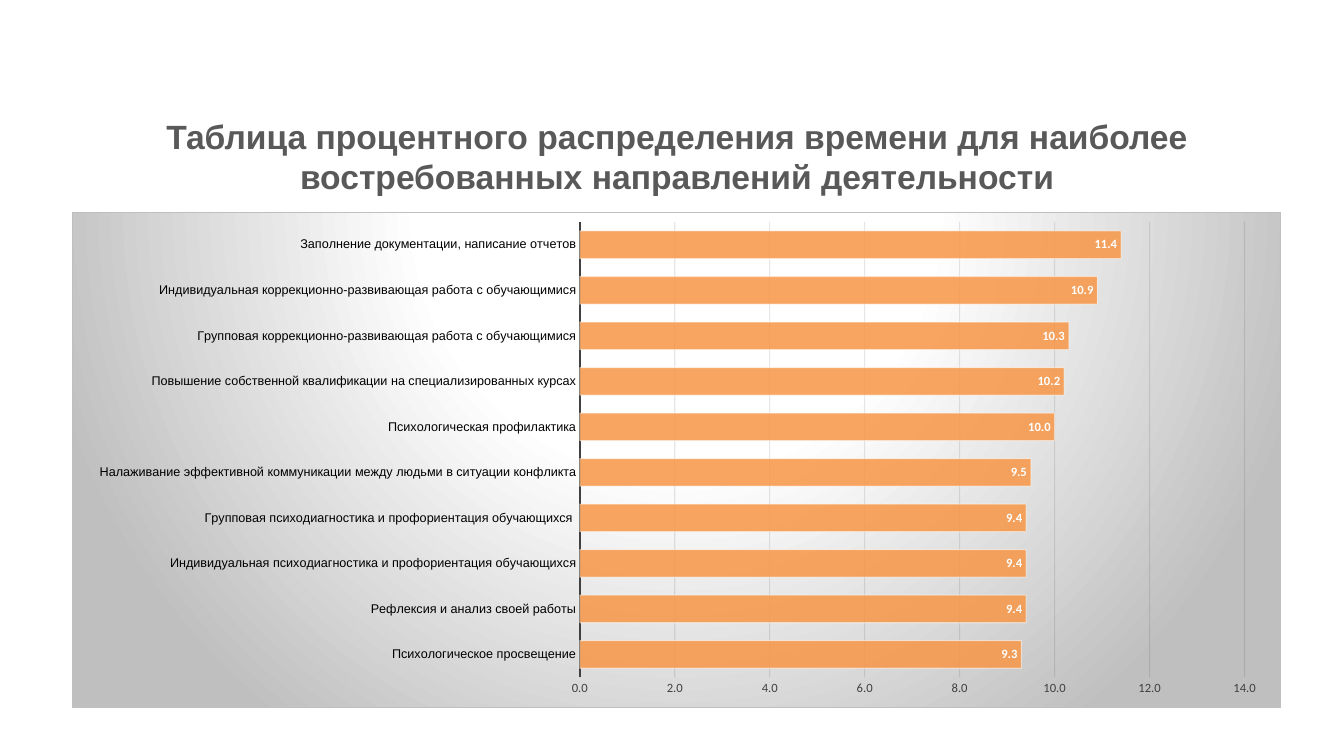
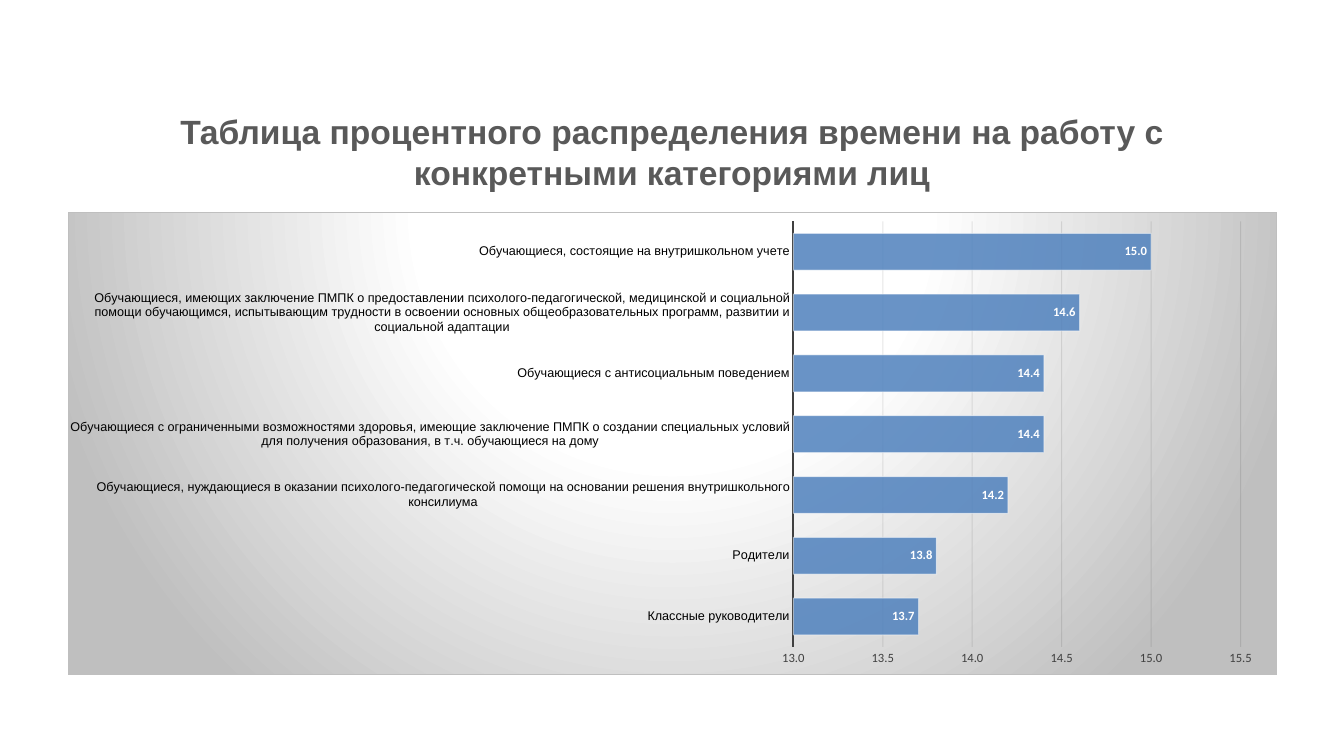
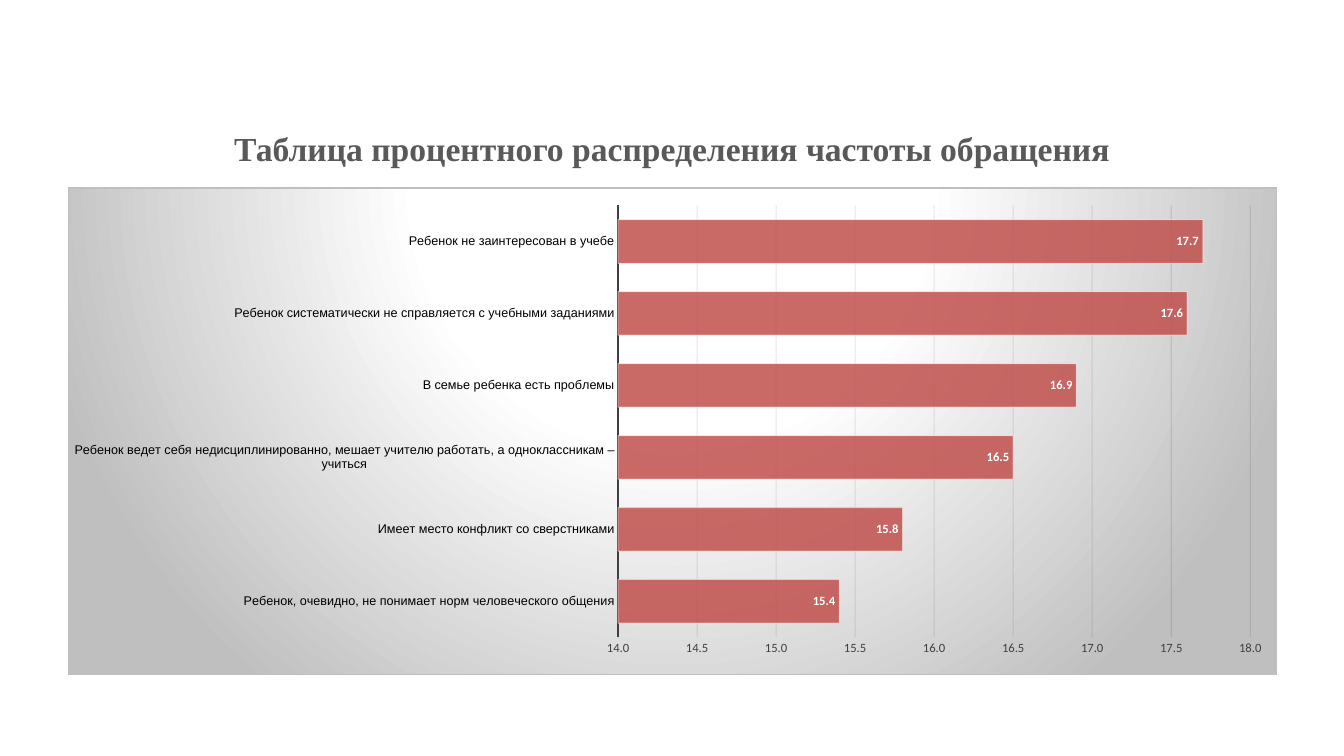
from lxml import etree
from pptx import Presentation
from pptx.chart.data import CategoryChartData
from pptx.dml.color import RGBColor
from pptx.enum import chart as kinds, text
from pptx.oxml import parse_xml
from pptx.oxml.ns import nsdecls, qn
from pptx.util import Inches, Pt

WHITE, BLACK, SILVER, GREY, DARK = "FFFFFF", "000000", "BFBFBF", "595959", "404040"
GRID = "0D0D0D"
ORANGE, BLUE, RED = "F79646", "4F81BD", "C0504D"
NUMBERS = "0.0"

PAGES = [
    dict(
        title="Таблица процентного распределения времени для наиболее востребованных направлений деятельности",
        face="Arial",
        title_box=(0.73, 1.31, 11.97, 0.47),
        chart_box=(0.71, 2.1, 12, 4.92),
        plot=(0.42, 0.02, 0.55, 0.92),
        scale=(0, 14, 2),
        color=ORANGE,
        rows=[
            ("Психологическое просвещение", 9.3),
            ("Рефлексия и анализ своей работы", 9.4),
            ("Индивидуальная психодиагностика и профориентация обучающихся", 9.4),
            ("Групповая психодиагностика и профориентация обучающихся ", 9.4),
            ("Налаживание эффективной коммуникации между людьми в ситуации конфликта", 9.5),
            ("Психологическая профилактика", 10),
            ("Повышение собственной квалификации на специализированных курсах", 10.2),
            ("Групповая коррекционно-развивающая работа с обучающимися", 10.3),
            ("Индивидуальная коррекционно-развивающая работа с обучающимися", 10.9),
            ("Заполнение документации, написание отчетов", 11.4),
        ],
    ),
    dict(
        title="Таблица процентного распределения времени на работу с конкретными категориями лиц",
        face="Arial",
        title_box=(0.68, 1.15, 11.97, 0.71),
        chart_box=(0.67, 2.1, 12, 4.6),
        plot=(0.6, 0.02, 0.37, 0.92),
        scale=(13, 15.5, 0.5),
        color=BLUE,
        rows=[
            ("Классные руководители", 13.7),
            ("Родители", 13.8),
            ("Обучающиеся, нуждающиеся в оказании психолого-педагогической помощи "
             "на основании решения внутришкольного консилиума", 14.2),
            ("Обучающиеся с ограниченными возможностями здоровья, имеющие заключение ПМПК "
             "о создании специальных условий для получения образования, "
             "в т.ч. обучающиеся на дому", 14.4),
            ("Обучающиеся с антисоциальным поведением", 14.4),
            ("Обучающиеся, имеющих заключение ПМПК о предоставлении "
             "психолого-педагогической, медицинской и социальной помощи обучающимся, "
             "испытывающим трудности в освоении основных общеобразовательных программ, "
             "развитии и социальной адаптации", 14.6),
            ("Обучающиеся, состоящие на внутришкольном учете", 15),
        ],
    ),
    dict(
        title="Таблица процентного распределения частоты обращения",
        face="Times New Roman",
        title_box=(0.68, 1.15, 11.97, 0.63),
        chart_box=(0.67, 1.86, 12, 4.84),
        plot=(0.455, 0.036, 0.523, 0.887),
        scale=(14, 18, 0.5),
        color=RED,
        rows=[
            ("Ребенок, очевидно, не понимает норм человеческого общения", 15.4),
            ("Имеет место конфликт со сверстниками", 15.8),
            ("Ребенок ведет себя недисциплинированно, мешает учителю работать, "
             "а одноклассникам – учиться", 16.5),
            ("В семье ребенка есть проблемы", 16.9),
            ("Ребенок систематически не справляется с учебными заданиями", 17.6),
            ("Ребенок не заинтересован в учебе", 17.7),
        ],
    ),
]


def rgb(code):
    return RGBColor.from_string(code)


def style_font(font, face, size, color, bold=False):
    font.name, font.size, font.bold = face, Pt(size), bold
    font.color.rgb = rgb(color)


def style_line(line, color, width):
    line.color.rgb = rgb(color)
    line.width = Pt(width)


def set_alpha(fill, percent):
    color = fill.find(qn("a:srgbClr"))
    etree.SubElement(color, qn("a:alpha")).set("val", str(percent * 1000))


def add_title(page, box, words, face):
    title = page.shapes.title
    title.left, title.top, title.width, title.height = map(Inches, box)
    frame = title.text_frame
    frame.word_wrap = True
    frame.auto_size = text.MSO_AUTO_SIZE.NONE
    frame.vertical_anchor = text.MSO_ANCHOR.MIDDLE
    para = frame.paragraphs[0]
    para.alignment = text.PP_ALIGN.CENTER
    span = para.add_run()
    span.text = words
    style_font(span.font, face, 24, GREY, True)


def paint_background(chart):
    stops = "".join(
        f'<a:gs pos="{place * 1000}"><a:srgbClr val="{color}"/></a:gs>'
        for place, color in ((0, WHITE), (39, WHITE), (100, SILVER))
    )
    area = parse_xml(
        f'<c:spPr {nsdecls("c", "a")}><a:gradFill><a:gsLst>{stops}</a:gsLst>'
        '<a:path path="circle"><a:fillToRect l="50000" t="-80000" r="50000" b="180000"/></a:path>'
        f'</a:gradFill><a:ln w="{Pt(0.75)}"><a:solidFill><a:srgbClr val="{SILVER}"/>'
        '</a:solidFill></a:ln></c:spPr>'
    )
    chart.element.find(qn("c:chart")).addnext(area)


def place_plot(chart, plot):
    area = chart.element.find(qn("c:chart")).find(qn("c:plotArea"))
    for old in area.findall(qn("c:layout")):
        area.remove(old)
    sizes = "".join(f'<c:{key} val="{value}"/>' for key, value in zip("xywh", plot))
    area.insert(0, parse_xml(
        f'<c:layout {nsdecls("c")}><c:manualLayout><c:layoutTarget val="inner"/>'
        f'<c:xMode val="edge"/><c:yMode val="edge"/>{sizes}</c:manualLayout></c:layout>'
    ))


def style_axes(chart, scale):
    names, values = chart.category_axis, chart.value_axis
    for axis, face, color in ((names, "Arial", BLACK), (values, "Calibri", DARK)):
        axis.major_tick_mark = axis.minor_tick_mark = kinds.XL_TICK_MARK.NONE
        style_font(axis.tick_labels.font, face, 9, color)
    names.has_major_gridlines = False
    style_line(names.format.line, DARK, 1.5)
    values.minimum_scale, values.maximum_scale, values.major_unit = scale
    values.tick_labels.number_format = NUMBERS
    values.tick_labels.number_format_is_linked = False
    values.format.line.fill.background()
    values.has_major_gridlines = True
    style_line(values.major_gridlines.format.line, GRID, 0.75)
    grid = chart.element.find(f".//{qn('c:majorGridlines')}")
    set_alpha(grid.find(f".//{qn('a:solidFill')}"), 10)


def style_bars(chart, color):
    bars = chart.plots[0]
    bars.gap_width = 65
    bars.vary_by_categories = False
    series = bars.series[0]
    series.format.fill.solid()
    series.format.fill.fore_color.rgb = rgb(color)
    style_line(series.format.line, WHITE, 0.75)
    shape = chart.element.find(f".//{qn('c:ser')}").find(qn("c:spPr"))
    set_alpha(shape.find(qn("a:solidFill")), 85)
    set_alpha(shape.find(qn("a:ln")).find(qn("a:solidFill")), 50)
    labels = series.data_labels
    labels.show_value = True
    labels.position = kinds.XL_LABEL_POSITION.INSIDE_END
    labels.number_format = NUMBERS
    labels.number_format_is_linked = False
    style_font(labels.font, "Calibri", 9, WHITE, True)


def add_bar_chart(page, box, rows, plot, scale, color):
    data = CategoryChartData(number_format=NUMBERS)
    data.categories = [name for name, value in rows]
    data.add_series("Series 1", [value for name, value in rows])
    frame = page.shapes.add_chart(
        kinds.XL_CHART_TYPE.BAR_CLUSTERED, *map(Inches, box), data
    )
    chart = frame.chart
    chart.has_legend = chart.has_title = False
    style_font(chart.font, "Calibri", 10, BLACK)
    paint_background(chart)
    place_plot(chart, plot)
    style_axes(chart, scale)
    style_bars(chart, color)


def add_chart_page(deck, title, face, title_box, chart_box, plot, scale, color, rows):
    page = deck.slides.add_slide(deck.slide_layouts[5])
    add_title(page, title_box, title, face)
    add_bar_chart(page, chart_box, rows, plot, scale, color)


def main():
    deck = Presentation()
    deck.slide_width, deck.slide_height = Inches(13.33), Inches(7.5)
    for content in PAGES:
        add_chart_page(deck, **content)
    deck.save("out.pptx")


if __name__ == "__main__":
    main()
